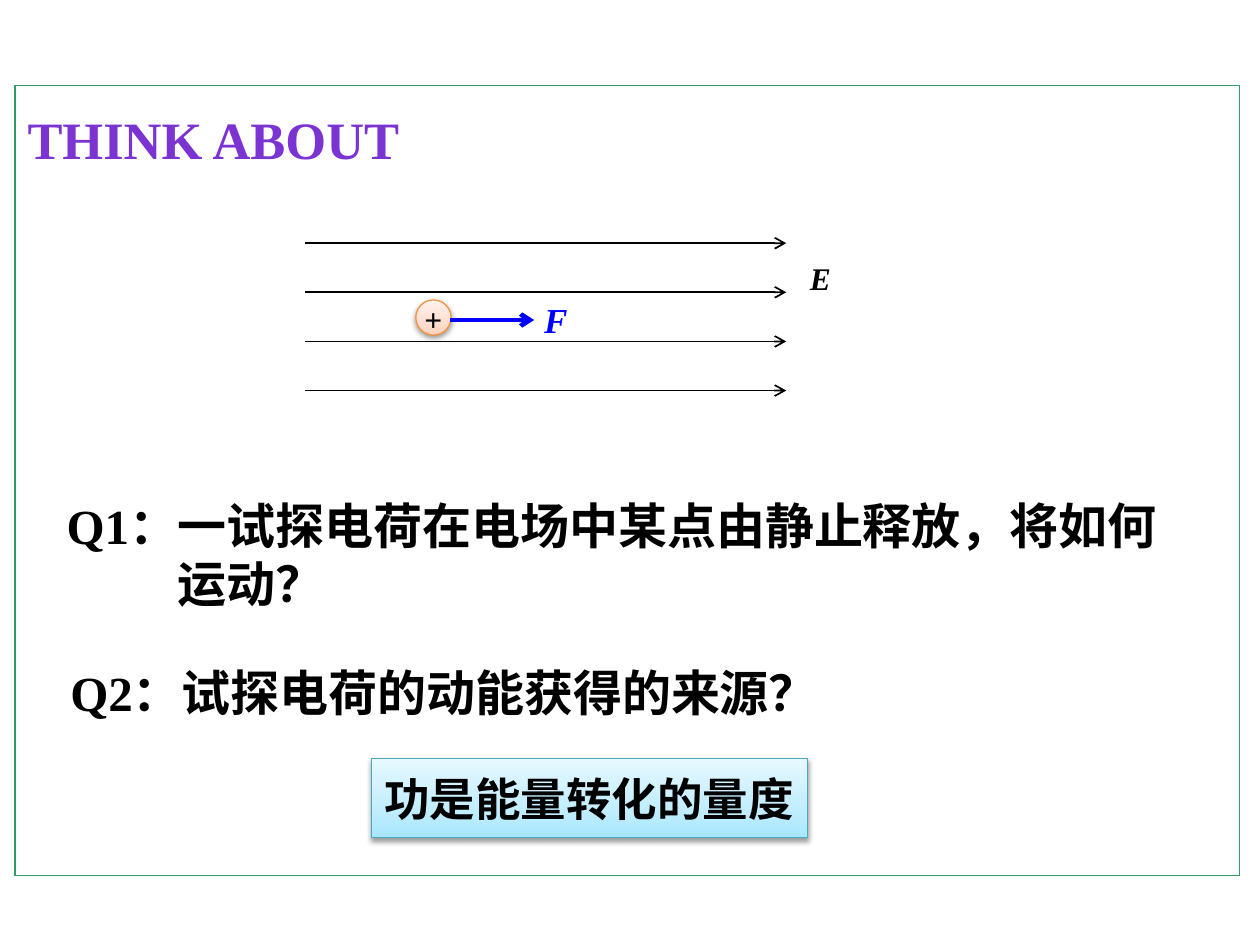
import pptx
import pptx.util
import pptx.dml.color
import pptx.enum.dml
import pptx.enum.shapes
import pptx.enum.text
import pptx.oxml
import pptx.oxml.ns

Inches = pptx.util.Inches
Pt = pptx.util.Pt
RGBColor = pptx.dml.color.RGBColor
qn = pptx.oxml.ns.qn
MSO_SHAPE = pptx.enum.shapes.MSO_SHAPE
NS = pptx.oxml.ns.nsdecls("a")

WHITE = RGBColor(0xFF, 0xFF, 0xFF)
BLACK = RGBColor(0x00, 0x00, 0x00)
BLUE = RGBColor(0x00, 0x00, 0xFF)
GREEN = RGBColor(0x33, 0x99, 0x66)
ORANGE = RGBColor(0xF6, 0x92, 0x40)
TEAL = RGBColor(0x46, 0xAA, 0xC5)
NAVY = RGBColor(0x05, 0x46, 0x97)
MAUVE = RGBColor(0x5E, 0x45, 0x7C)
DARK_PURPLE = RGBColor(0x3D, 0x1B, 0x67)
PURPLE = RGBColor(0x7B, 0x34, 0xD2)
MID_PURPLE = RGBColor(0x73, 0x30, 0xC4)

TITLE_STOPS = [(0, DARK_PURPLE), (43, PURPLE), (48, MID_PURPLE), (100, DARK_PURPLE)]
PEACH_STOPS = [
    (0, RGBColor(0xFF, 0xD2, 0xBD)),
    (35, RGBColor(0xFF, 0xDE, 0xD0)),
    (100, RGBColor(0xFF, 0xF2, 0xED)),
]
SKY_STOPS = [
    (0, RGBColor(0xA7, 0xE6, 0xFF)),
    (35, RGBColor(0xC1, 0xED, 0xFF)),
    (100, RGBColor(0xE7, 0xF8, 0xFF)),
]
SERIF = "Times New Roman"
CJK = "Noto Sans CJK SC"


def set_gradient(fill, parent, stops, angle):
    fill.gradient()
    fill.gradient_angle = angle
    gs_lst = parent.find(qn("a:gradFill")).find(qn("a:gsLst"))
    for gs in list(gs_lst):
        gs_lst.remove(gs)
    for pos, color in stops:
        gs_lst.append(pptx.oxml.parse_xml(
            f'<a:gs {NS} pos="{pos * 1000}"><a:srgbClr val="{color}"/></a:gs>'))


def add_text(s, text, box, size=28, color=BLACK, font=SERIF, italic=False, align=None,
             wrap=True, hanging=0, stops=None, outline=None, outline_width=1):
    sp = s.shapes.add_textbox(*map(Inches, box))
    tf = sp.text_frame
    tf.word_wrap = wrap
    tf.auto_size = pptx.enum.text.MSO_AUTO_SIZE.SHAPE_TO_FIT_TEXT
    for i, line in enumerate(text.split("\n")):
        p = tf.paragraphs[0] if i == 0 else tf.add_paragraph()
        p.alignment = align
        if i and hanging:
            p._p.get_or_add_pPr().set("marL", str(Inches(hanging)))
        r = p.add_run()
        r.text = line
        r.font.size = Pt(size)
        r.font.bold = True
        r.font.italic = italic
        r.font.name = font
        rPr = r._r.get_or_add_rPr()
        rPr.find(qn("a:latin")).addnext(
            pptx.oxml.parse_xml(f'<a:ea {NS} typeface="{CJK}"/>'))
        if stops:
            set_gradient(r.font.fill, rPr, stops, 270)
        else:
            r.font.color.rgb = color
        if outline is not None:
            rPr.insert(0, pptx.oxml.parse_xml(
                f'<a:ln {NS} w="{Pt(outline_width)}"><a:solidFill>'
                f'<a:srgbClr val="{outline}"/></a:solidFill></a:ln>'))
    return sp


def add_raised_shape(s, kind, box, stops, line):
    sp = s.shapes.add_shape(kind, *map(Inches, box))
    set_gradient(sp.fill, sp._element.spPr, stops, 90)
    sp.line.color.rgb = line
    sp.line.width = Pt(0.75)
    sp.shadow.inherit = False
    sp._element.spPr.find(qn("a:effectLst")).append(pptx.oxml.parse_xml(
        f'<a:outerShdw {NS} blurRad="{Pt(3.1)}" dist="{Pt(1.6)}" dir="5400000" '
        'rotWithShape="0"><a:srgbClr val="000000"><a:alpha val="38000"/>'
        '</a:srgbClr></a:outerShdw>'))
    return sp


def add_arrow(s, left, right, y, color, width):
    cxn = s.shapes.add_connector(
        pptx.enum.shapes.MSO_CONNECTOR.STRAIGHT,
        Inches(left), Inches(y), Inches(right), Inches(y))
    cxn.line.color.rgb = color
    cxn.line.width = Pt(width)
    cxn.line._get_or_add_ln().append(
        pptx.oxml.parse_xml(f'<a:tailEnd {NS} type="arrow"/>'))
    cxn._element.spPr.append(pptx.oxml.parse_xml(f"<a:effectLst {NS}/>"))


def add_frame(s, box):
    sp = s.shapes.add_shape(MSO_SHAPE.RECTANGLE, *map(Inches, box))
    sp.shadow.inherit = False
    sp.fill.solid()
    sp.fill.fore_color.rgb = WHITE
    clr = sp._element.spPr.find(qn("a:solidFill"))[0]
    clr.append(pptx.oxml.parse_xml(f'<a:alpha {NS} val="46000"/>'))
    sp.line.color.rgb = GREEN
    sp.line.width = Pt(0.75)


def add_field(s, left, top, width, height):
    for i in range(4):
        add_arrow(s, left, left + width, top + i * height / 3, BLACK, 1)
    add_text(s, "E", (left + width + 0.09, top + 0.08, 0.63, 0.4), size=18, italic=True)


def add_charge(s, left, top, size):
    right = left + size
    add_raised_shape(s, MSO_SHAPE.OVAL, (left, top, size, size), PEACH_STOPS, ORANGE)
    add_text(s, "+", (left - 0.03, top - 0.05, 0.34, 0.4), size=18, wrap=False,
             align=pptx.enum.text.PP_ALIGN.CENTER)
    add_arrow(s, right - 0.01, right + 0.66, top + 0.16, BLUE, 2.5)
    add_text(s, "F", (right + 0.64, top - 0.06, 0.63, 0.44), size=20, color=BLUE,
             italic=True)


def add_questions(s, left, top):
    add_text(s, "Q1：一试探电荷在电场中某点由静止释放，将如何\n运动？",
             (left, top, 9.1, 1.04), hanging=0.88)
    add_text(s, "Q2：试探电荷的动能获得的来源？", (left + 0.03, top + 1.33, 7.36, 0.57))


def add_conclusion(s, left, top, width, height):
    add_raised_shape(s, MSO_SHAPE.RECTANGLE, (left, top, width, height), SKY_STOPS, TEAL)
    add_text(s, "功是能量转化的量度", (left, top + 0.05, width + 0.08, 0.54), size=26,
             font=CJK, outline=NAVY)


def main():
    prs = pptx.Presentation()
    prs.slide_width = Inches(10)
    prs.slide_height = Inches(7.5)
    s = prs.slides.add_slide(prs.slide_layouts[6])
    add_frame(s, (0.12, 0.68, 9.72, 6.27))
    add_text(s, "THINK ABOUT", (0.12, 0.8, 3.48, 0.61), size=30, stops=TITLE_STOPS,
             outline=MAUVE, outline_width=0.71)
    add_field(s, 2.42, 1.93, 3.82, 1.17)
    add_charge(s, 3.3, 2.38, 0.28)
    add_questions(s, 0.43, 3.88)
    add_conclusion(s, 2.95, 6.02, 3.46, 0.63)
    prs.save("out.pptx")


if __name__ == "__main__":
    main()
